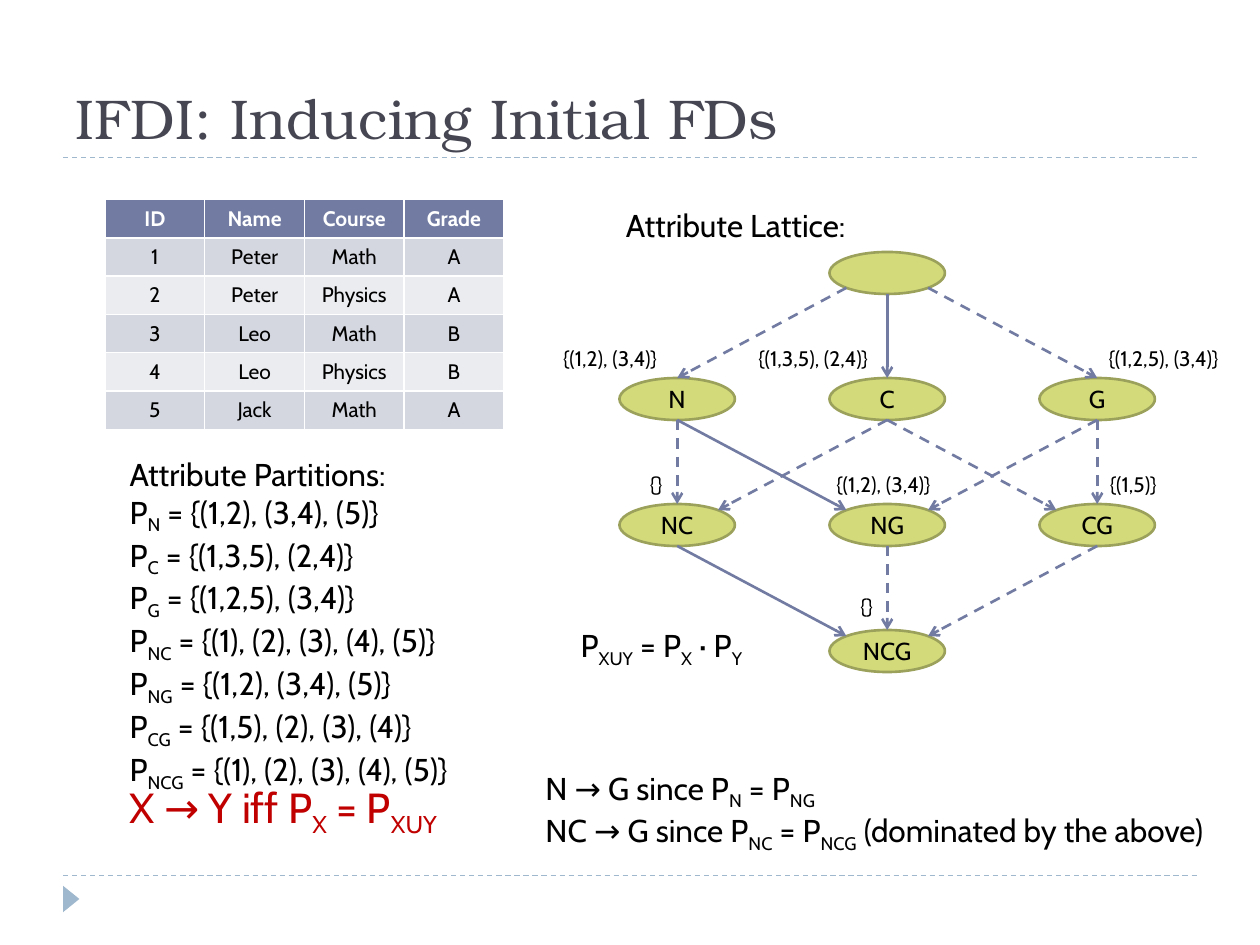
"""Build the slide on inducing initial functional dependencies."""
import math
from dataclasses import dataclass

import pptx
import pptx.dml.color
import pptx.enum.dml
import pptx.enum.shapes
import pptx.enum.text
import pptx.oxml.ns
import pptx.util
from lxml import etree

COLORS = {
    "title": "464653", "rule": "9FB8CD", "text": "000000", "accent": "C00000",
    "edge": "727CA3", "node": "D2DA7A", "outline": "9BA15A", "header": "727CA3",
    "odd": "D5D7E0", "even": "EBECF0", "white": "FFFFFF",
}
BODY_FONT, TITLE_FONT = "Cabin", "TeX Gyre Bonum"
GRID_COLUMNS, GRID_ROWS = 120, 90
CELL = pptx.util.Inches(10) / GRID_COLUMNS
NODE_WIDTH, NODE_HEIGHT = 11, 4
CENTER = pptx.enum.text.PP_ALIGN.CENTER
DASH = pptx.enum.dml.MSO_LINE.DASH


@dataclass(frozen=True)
class Node:
    name: str
    column: int
    row: int

    @property
    def left(self) -> float:
        return 59 + 20 * self.column

    @property
    def top(self) -> float:
        return 24 + 12 * self.row

    def site(self, side: int, slant: int) -> tuple[float, float]:
        """Return the outline point above (-1) or below (1), slanted left or right."""
        diagonal = math.sqrt(0.5)
        reach = diagonal if slant else 1
        return (self.left + NODE_WIDTH / 2 * (1 + slant * diagonal),
                self.top + NODE_HEIGHT / 2 * (1 + side * reach))


@dataclass(frozen=True)
class Edge:
    parent: str
    child: str
    solid: bool = False


@dataclass(frozen=True)
class Note:
    left: float
    top: float
    width: float
    height: float
    lines: tuple[str, ...]
    size: int = 18
    color: str = "text"
    wrap: bool = True


NODES = [
    Node("", 1, 0), Node("N", 0, 1), Node("C", 1, 1), Node("G", 2, 1),
    Node("NC", 0, 2), Node("NG", 1, 2), Node("CG", 2, 2), Node("NCG", 1, 3),
]
EDGES = [
    Edge("", "N"), Edge("", "C", True), Edge("", "G"),
    Edge("N", "NC"), Edge("C", "NC"), Edge("C", "CG"),
    Edge("N", "NG", True), Edge("G", "CG"), Edge("G", "NG"),
    Edge("NC", "NCG", True), Edge("CG", "NCG"), Edge("NG", "NCG"),
]
LABELS = [
    (52.44, 32.28, 12.12, "{(1,2), (3,4)}"), (71.04, 32.28, 13.56, "{(1,3,5), (2,4)}"),
    (104.4, 32.28, 13.56, "{(1,2,5), (3,4)}"), (60.72, 44.28, 3.72, "{}"),
    (78.48, 44.28, 12.12, "{(1,2), (3,4)}"), (104.52, 44.28, 7.56, "{(1,5)}"),
    (80.76, 55.92, 3.72, "{}"),
]
NOTES = [
    Note(11.16, 42.72, 35.76, 30.24, (
        "Attribute Partitions:", "P|N| = {(1,2), (3,4), (5)}", "P|C| = {(1,3,5), (2,4)}",
        "P|G| = {(1,2,5), (3,4)}", "P|NC| = {(1), (2), (3), (4), (5)}",
        "P|NG| = {(1,2), (3,4), (5)}", "P|CG| = {(1,5), (2), (3), (4)}",
        "P|NCG| = {(1), (2), (3), (4), (5)}")),
    Note(11.16, 73.8, 35.76, 6.12, ("X → Y iff P|X| = P|XUY|",), 24, "accent"),
    Note(58.44, 19, 23.64, 4.8, ("Attribute Lattice:",), wrap=False),
    Note(50.76, 72.6, 67.08, 8.52, (
        "N → G since P|N| = P|NG|",
        "NC → G since P|NC| = P|NCG| (dominated by the above)")),
    Note(54.12, 59.04, 20.76, 4.8, ("P|XUY| = P|X| · P|Y|",)),
    *(Note(left, top, width, 3.6, (line,), 12, wrap=False)
      for left, top, width, line in LABELS),
]
TABLE = [
    ("ID", "Name", "Course", "Grade"), ("1", "Peter", "Math", "A"),
    ("2", "Peter", "Physics", "A"), ("3", "Leo", "Math", "B"),
    ("4", "Leo", "Physics", "B"), ("5", "Jack", "Math", "A"),
]


def grid(*lengths: float) -> list[int]:
    return [round(length * CELL) for length in lengths]


def rgb(name: str) -> pptx.dml.color.RGBColor:
    return pptx.dml.color.RGBColor.from_string(COLORS[name])


def write(para, text: str, size: int, color: str = "text", face: str = BODY_FONT,
          bold: bool = False) -> None:
    """Fill a paragraph, lowering the parts that stand between bars."""
    for index, part in enumerate(text.split("|")):
        if part:
            span = para.add_run()
            span.text = part
            if index % 2:
                span._r.get_or_add_rPr().set("baseline", "-25000")
    para.font.name, para.font.size, para.font.bold = face, pptx.util.Pt(size), bold
    para.font.color.rgb = rgb(color)


def draw_line(page, start, end, color: str, weight: float, dashed: bool,
              arrow: bool = False) -> None:
    line = page.shapes.add_connector(
        pptx.enum.shapes.MSO_CONNECTOR.STRAIGHT, *grid(*start, *end))
    line.line.color.rgb, line.line.width = rgb(color), pptx.util.Pt(weight)
    if dashed:
        line.line.dash_style = DASH
    if arrow:
        etree.SubElement(line.line._get_or_add_ln(), pptx.oxml.ns.qn("a:tailEnd"),
                         type="arrow")
    etree.SubElement(line._element.spPr, pptx.oxml.ns.qn("a:effectLst"))


def draw_node(page, node: Node) -> None:
    oval = page.shapes.add_shape(pptx.enum.shapes.MSO_SHAPE.OVAL,
                                 *grid(node.left, node.top, NODE_WIDTH, NODE_HEIGHT))
    oval.shadow.inherit = False
    oval.fill.solid()
    oval.fill.fore_color.rgb = rgb("node")
    oval.line.color.rgb, oval.line.width = rgb("outline"), pptx.util.Pt(1.5)
    if node.name:
        frame = oval.text_frame
        frame.margin_left = frame.margin_right = 0
        frame.vertical_anchor = pptx.enum.text.MSO_ANCHOR.MIDDLE
        frame.paragraphs[0].alignment = CENTER
        write(frame.paragraphs[0], node.name, 14)


def draw_edge(page, parent: Node, child: Node, solid: bool) -> None:
    slant = (child.column > parent.column) - (child.column < parent.column)
    from_root = parent.row == 0
    draw_line(page, parent.site(1, slant if from_root else 0),
              child.site(-1, 0 if from_root else -slant), "edge", 1.5, not solid, True)


def draw_note(page, note: Note) -> None:
    box = page.shapes.add_textbox(*grid(note.left, note.top, note.width, note.height))
    frame = box.text_frame
    frame.word_wrap = note.wrap
    for index, line in enumerate(note.lines):
        para = frame.add_paragraph() if index else frame.paragraphs[0]
        write(para, line, note.size, note.color)


def draw_table(page) -> None:
    table = page.shapes.add_table(len(TABLE), len(TABLE[0]), *grid(10, 19, 38, 21.84)).table
    for row, values in enumerate(TABLE):
        for column, value in enumerate(values):
            cell = table.cell(row, column)
            para = cell.text_frame.paragraphs[0]
            para.alignment = CENTER
            write(para, value, 12, "text" if row else "white", bold=row == 0)
            properties = cell._tc.get_or_add_tcPr()
            for side in ("lnL", "lnR", "lnT", "lnB"):
                border = etree.SubElement(properties, pptx.oxml.ns.qn(f"a:{side}"), w="12700")
                fill = etree.SubElement(border, pptx.oxml.ns.qn("a:solidFill"))
                etree.SubElement(fill, pptx.oxml.ns.qn("a:srgbClr"), val=COLORS["white"])
            cell.fill.solid()
            cell.fill.fore_color.rgb = rgb(("odd" if row % 2 else "even") if row else "header")


def draw_frame(page) -> None:
    for row in (83.4, 15):
        draw_line(page, (6, row), (114, row), "rule", 0.75, True)
    marker = page.shapes.add_shape(pptx.enum.shapes.MSO_SHAPE.ISOSCELES_TRIANGLE,
                                   *grid(5.52, 84.84, 2.52, 1.56))
    marker.rotation = 90
    marker.shadow.inherit = False
    marker.fill.solid()
    marker.fill.fore_color.rgb = rgb("rule")
    marker.line.fill.background()
    title = page.shapes.title
    title.left, title.top, title.width, title.height = grid(6, 2, 108, 13)
    title.text_frame.vertical_anchor = pptx.enum.text.MSO_ANCHOR.BOTTOM
    para = title.text_frame.paragraphs[0]
    para.alignment = pptx.enum.text.PP_ALIGN.LEFT
    write(para, "IFDI: Inducing Initial FDs", 32, "title", TITLE_FONT)


def main() -> None:
    deck = pptx.Presentation()
    deck.slide_width, deck.slide_height = grid(GRID_COLUMNS, GRID_ROWS)
    page = deck.slides.add_slide(deck.slide_layouts[5])
    draw_frame(page)
    draw_table(page)
    nodes = {node.name: node for node in NODES}
    for node in NODES:
        draw_node(page, node)
    for edge in EDGES:
        draw_edge(page, nodes[edge.parent], nodes[edge.child], edge.solid)
    for note in NOTES:
        draw_note(page, note)
    deck.save("out.pptx")


if __name__ == "__main__":
    main()
